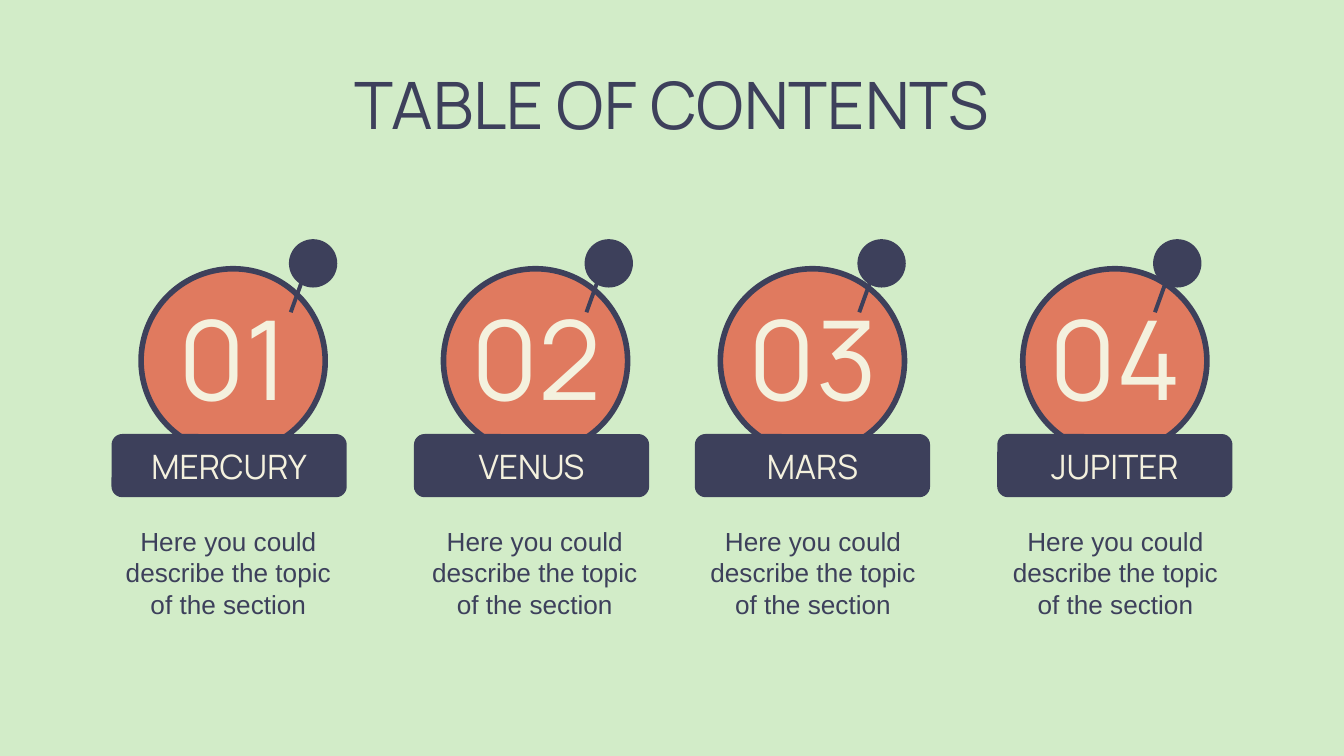
import pptx
import pptx.util
import pptx.dml.color
import pptx.enum.shapes
import pptx.enum.text

Inches = pptx.util.Inches
RGBColor = pptx.dml.color.RGBColor
MSO_SHAPE = pptx.enum.shapes.MSO_SHAPE
MSO_ANCHOR = pptx.enum.text.MSO_ANCHOR

MINT = RGBColor(0xD2, 0xEC, 0xC8)
NAVY = RGBColor(0x3D, 0x40, 0x5B)
CORAL = RGBColor(0xE0, 0x7A, 0x5F)
CREAM = RGBColor(0xF4, 0xF1, 0xDE)

# number, planet, then the left edges of disc, pin head, badge, description
SECTIONS = [
    ("01", "MERCURY", 1.05, 2.15, 0.83, 0.85),
    ("02", "VENUS", 3.30, 4.35, 3.08, 3.13),
    ("03", "MARS", 5.36, 6.38, 5.17, 5.20),
    ("04", "JUPITER", 7.61, 8.58, 7.42, 7.45),
]
DESCRIPTION = "Here you could describe the topic of the section"


def add_solid(parent, kind, left, top, width, height, color):
    shape = parent.add_shape(
        kind, Inches(left), Inches(top), Inches(width), Inches(height))
    shape.shadow.inherit = False
    shape.fill.solid()
    shape.fill.fore_color.rgb = color
    shape.line.fill.background()
    return shape


def write_centered(box, text, font, size, color, anchor=MSO_ANCHOR.MIDDLE):
    """Fill a text holder with one centred paragraph and no insets."""
    frame = box.text_frame
    frame.text = text
    frame.word_wrap = True
    frame.auto_size = pptx.enum.text.MSO_AUTO_SIZE.NONE
    frame.vertical_anchor = anchor
    frame.margin_left = frame.margin_right = 0
    frame.margin_top = frame.margin_bottom = 0
    para = frame.paragraphs[0]
    para.alignment = pptx.enum.text.PP_ALIGN.CENTER
    span = para.runs[0]
    span.font.name = font
    span.font.size = pptx.util.Pt(size)
    span.font.color.rgb = color


deck = pptx.Presentation()
deck.slide_width = Inches(10)
deck.slide_height = Inches(10 * 9 / 16)
page = deck.slides.add_slide(deck.slide_layouts.get_by_name("Title Only"))
page.background.fill.solid()
page.background.fill.fore_color.rgb = MINT

title = page.shapes.title
title.left, title.top = Inches(0.78), Inches(0.48)
title.width, title.height = Inches(8.44), Inches(0.63)
write_centered(title, "TABLE OF CONTENTS", "Manrope", 35, NAVY, MSO_ANCHOR.TOP)

for number, planet, disc_left, pin_left, badge_left, text_left in SECTIONS:
    disc = add_solid(page.shapes, MSO_SHAPE.OVAL,
                     disc_left, 2, 1.37, 1.37, CORAL)
    disc.rotation = 8.7
    disc.line.color.rgb = NAVY
    disc.line.width = pptx.util.Pt(3)

    number_box = page.shapes.add_textbox(
        Inches(disc_left - 0.16), Inches(1.91), Inches(1.7), Inches(1.49))
    write_centered(number_box, number, "Manrope", 59, CREAM)

    pin = page.shapes.add_group_shape()
    stem = add_solid(pin.shapes, MSO_SHAPE.RECTANGLE,
                     pin_left + 0.09, 1.8, 0.03, 0.54, NAVY)
    stem.rotation = 19.8
    add_solid(pin.shapes, MSO_SHAPE.OVAL, pin_left, 1.78, 0.36, 0.36, NAVY)

    badge = add_solid(page.shapes, MSO_SHAPE.ROUNDED_RECTANGLE,
                      badge_left, 3.23, 1.75, 0.47, NAVY)
    badge.adjustments[0] = 0.17
    planet_box = page.shapes.add_textbox(
        Inches(badge_left), Inches(3.23), Inches(1.75), Inches(0.47))
    write_centered(planet_box, planet, "Manrope", 18, CREAM)

    description_box = page.shapes.add_textbox(
        Inches(text_left), Inches(3.91), Inches(1.7), Inches(0.92))
    write_centered(description_box, DESCRIPTION, "Arial", 14, NAVY,
                   MSO_ANCHOR.TOP)

deck.save("out.pptx")
